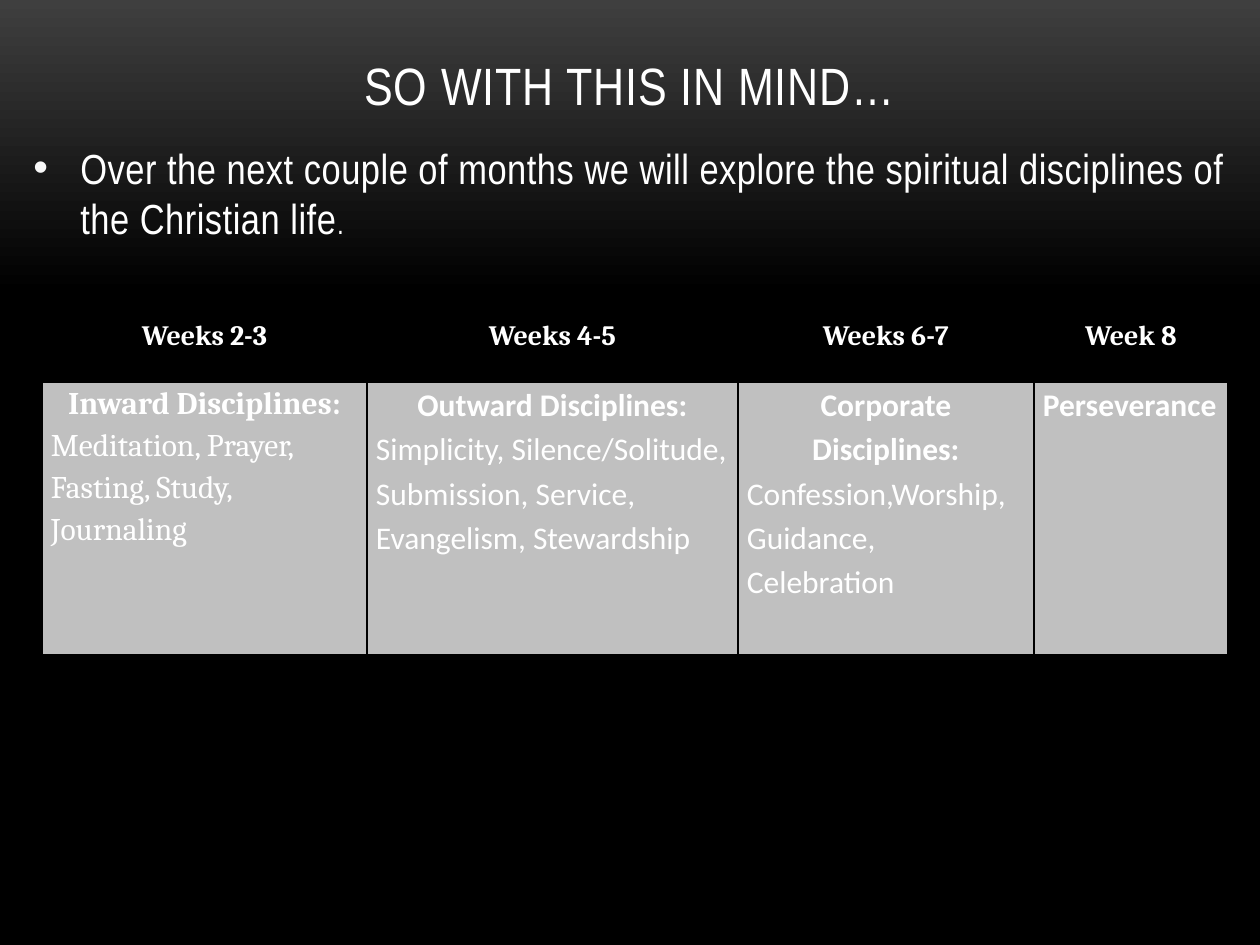
from pptx import Presentation
from pptx.dml.color import RGBColor
from pptx.enum.text import MSO_ANCHOR, PP_ALIGN
from pptx.oxml import parse_xml
from pptx.oxml.ns import nsdecls
from pptx.util import Emu, Pt

PX = 914400 // 126
WHITE, BLACK, SILVER = "FFFFFF", "000000", "C0C0C0"


def color(hex_code):
    return RGBColor.from_string(hex_code)


def write(paragraph, text, font_name, size, bold=False, align=PP_ALIGN.LEFT, spacing=0):
    """Add a run and style its paragraph; spacing is in hundredths of a point."""
    run = paragraph.add_run()
    run.text = text
    run._r.get_or_add_rPr().set("spc", str(spacing))
    paragraph.alignment = align
    font = paragraph.font
    font.name, font.size, font.bold = font_name, Pt(size), bold
    font.color.rgb = color(WHITE)


prs = Presentation()
prs.slide_width, prs.slide_height = Emu(1260 * PX), Emu(945 * PX)
slide = prs.slides.add_slide(prs.slide_layouts[6])

backdrop = slide.background.fill
backdrop.gradient()
backdrop.gradient_angle = 270
for stop, (position, shade) in zip(backdrop.gradient_stops, [(0, "3F3F3F"), (0.31, BLACK)]):
    stop.position = position
    stop.color.rgb = color(shade)

# Title
title = slide.shapes.add_textbox(84 * PX, 21 * PX, 1092 * PX, 101 * PX).text_frame
title.word_wrap = True
title.vertical_anchor = MSO_ANCHOR.BOTTOM
write(title.paragraphs[0], "SO WITH THIS IN MIND…", "Arial Narrow", 30,
      align=PP_ALIGN.CENTER, spacing=50)

# Introductory bullet
intro = slide.shapes.add_textbox(21 * PX, 136 * PX, 1239 * PX, 120 * PX).text_frame
intro.word_wrap = True
bullet = intro.paragraphs[0]
bullet_props = bullet._p.get_or_add_pPr()
bullet_props.set("marL", str(47 * PX))
bullet_props.set("indent", str(-47 * PX))
for markup in (f'<a:buClr {nsdecls("a")}><a:srgbClr val="F8F8F8"/></a:buClr>',
               f'<a:buFont {nsdecls("a")} typeface="Arial"/>',
               f'<a:buChar {nsdecls("a")} char="•"/>'):
    bullet_props.append(parse_xml(markup))
write(bullet, "Over the next couple of months we will explore the spiritual disciplines "
      "of the Christian life", "Arial Narrow", 24, spacing=30)
period = bullet.add_run()
period.text = "."
period.font.size = Pt(17)

# Schedule of disciplines: weeks, heading, heading alignment, topics, topic alignment, font
schedule = [
    ("Weeks 2-3", "Inward Disciplines:", PP_ALIGN.CENTER,
     "Meditation, Prayer, Fasting, Study, Journaling", PP_ALIGN.LEFT, "Cambria"),
    ("Weeks 4-5", "Outward Disciplines:", PP_ALIGN.CENTER,
     "Simplicity, Silence/Solitude, Submission, Service, Evangelism, Stewardship",
     PP_ALIGN.LEFT, "Calibri"),
    ("Weeks 6-7", "Corporate Disciplines:", PP_ALIGN.CENTER,
     "Confession,Worship, Guidance, Celebration", PP_ALIGN.JUSTIFY, "Calibri"),
    ("Week 8", "Perseverance", PP_ALIGN.LEFT, "", PP_ALIGN.LEFT, "Calibri"),
]
column_widths = [325, 371, 296, 194]
row_heights = [66, 274]
table = slide.shapes.add_table(2, 4, 42 * PX, 315 * PX, sum(column_widths) * PX,
                               sum(row_heights) * PX).table
table.first_row = table.horz_banding = False
for row, height in zip(table.rows, row_heights):
    row.height = Emu(height * PX)

for index, (weeks, heading, heading_align, topics, topics_align, font_name) in enumerate(schedule):
    table.columns[index].width = Emu(column_widths[index] * PX)
    week_cell, topic_cell = table.cell(0, index), table.cell(1, index)

    write(week_cell.text_frame.paragraphs[0], weeks, "Cambria", 16, True, PP_ALIGN.CENTER)
    write(topic_cell.text_frame.paragraphs[0], heading, font_name, 18, True, heading_align)
    if topics:
        write(topic_cell.text_frame.add_paragraph(), topics, font_name, 18, align=topics_align)

    for cell, thick_side in ((week_cell, "B"), (topic_cell, "T")):
        cell.margin_left = cell.margin_right = Emu(9 * PX)
        cell.margin_top = cell.margin_bottom = 0
        for paragraph in cell.text_frame.paragraphs:
            paragraph.line_spacing = 1.15
        for side in "LRTB":
            width = Pt(2.25 if side == thick_side else 1)
            cell._tc.get_or_add_tcPr().append(parse_xml(
                f'<a:ln{side} {nsdecls("a")} w="{width}"><a:solidFill>'
                f'<a:srgbClr val="{BLACK}"/></a:solidFill></a:ln{side}>'))
    week_cell.fill.background()
    topic_cell.fill.solid()
    topic_cell.fill.fore_color.rgb = color(SILVER)

prs.save("out.pptx")
